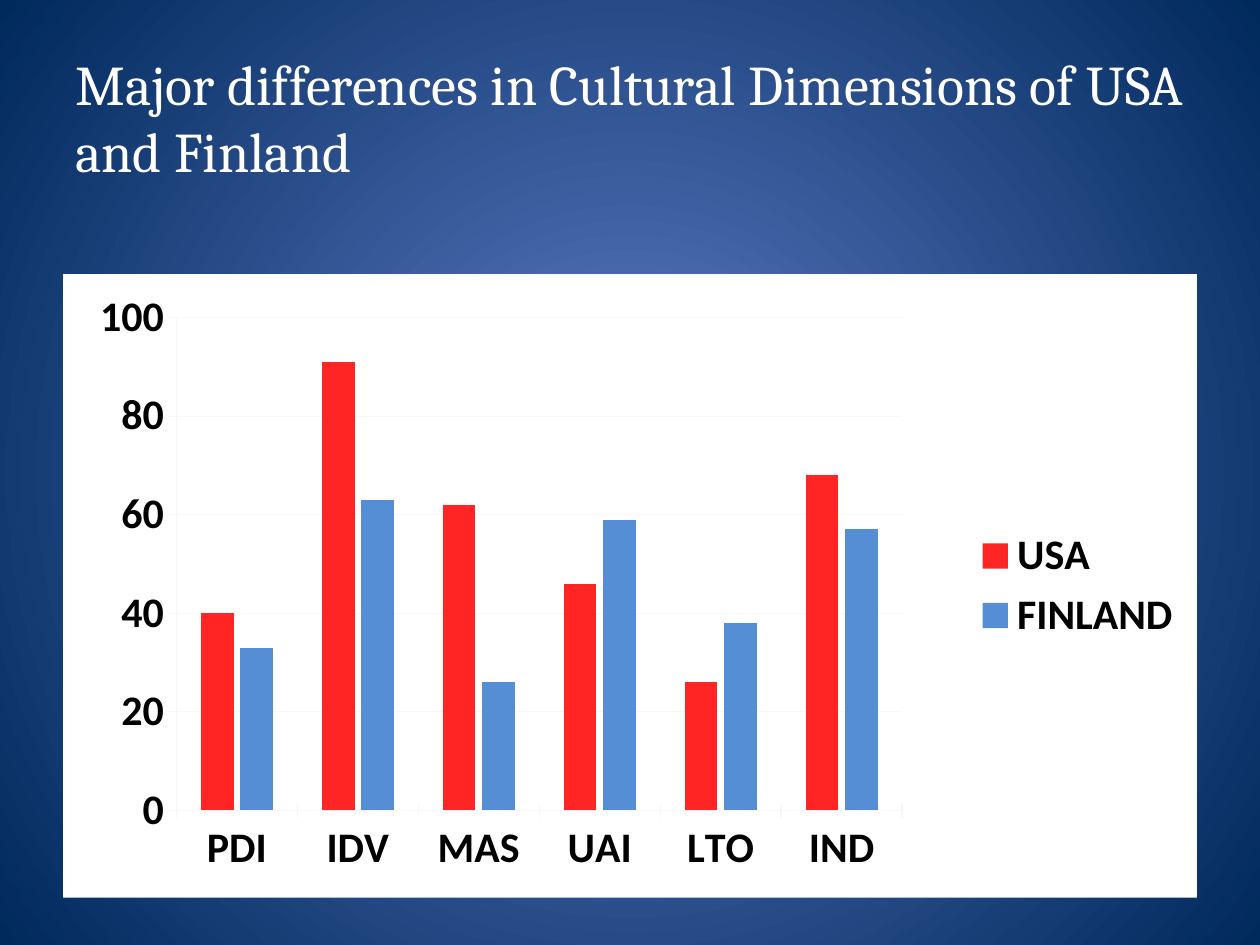
from lxml import etree
from pptx import Presentation
from pptx.chart.data import CategoryChartData
from pptx.dml.color import RGBColor
from pptx.enum.chart import XL_CHART_TYPE, XL_LEGEND_POSITION, XL_TICK_MARK
from pptx.enum.text import MSO_ANCHOR
from pptx.oxml import parse_xml
from pptx.oxml.ns import nsdecls, qn
from pptx.util import Inches, Pt

COLUMNS = XL_CHART_TYPE.COLUMN_CLUSTERED
LEGEND_RIGHT = XL_LEGEND_POSITION.RIGHT
TICK_CROSS = XL_TICK_MARK.CROSS
MIDDLE = MSO_ANCHOR.MIDDLE

# Slide size and the shared left margin, in inches
WIDTH, HEIGHT = 10, 7.5
MARGIN = 0.05 * WIDTH
CONTENT_WIDTH = WIDTH - 2 * MARGIN

BLACK, WHITE, PALE_GREY = "000000", "FFFFFF", "F7F7F7"
GLOW_CENTRE, GLOW_EDGE = "5E7CC5", "00295C"

DIMENSIONS = ["PDI", "IDV", "MAS", "UAI", "LTO", "IND"]
COUNTRIES = [
    ("USA", "FF2525", [40, 91, 62, 46, 26, 68]),
    ("FINLAND", "558ED5", [33, 63, 26, 59, 38, 57]),
]
PLOT_SHARES = {"x": 0.1, "y": 0.07, "w": 0.64, "h": 0.79}


def rgb(hex_color):
    return RGBColor.from_string(hex_color)


def set_radial_background(slide, centre, edge):
    fill = slide.background.fill
    fill.gradient()
    for stop, position, color in zip(fill.gradient_stops, (0, 1), (centre, edge)):
        stop.position = position
        stop.color.rgb = rgb(color)
    # Turn the linear gradient into a circular one
    grad = next(slide.element.iter(qn("a:gradFill")))
    grad.remove(grad.find(qn("a:lin")))
    path = etree.SubElement(grad, qn("a:path"), path="circle")
    etree.SubElement(path, qn("a:fillToRect"),
                     {side: "50000" for side in "ltrb"})


def add_title(slide, text, top, height):
    sp = slide.shapes.add_textbox(Inches(MARGIN), Inches(top),
                                  Inches(CONTENT_WIDTH), Inches(height))
    tf = sp.text_frame
    tf.word_wrap = True
    tf.vertical_anchor = MIDDLE
    p = tf.paragraphs[0]
    p.text = text
    p.font.name = "Cambria"
    p.font.size = Pt(32)
    p.font.color.rgb = rgb(WHITE)


def set_chart_area(chart, fill, shares):
    chart_el = chart.element.find(qn("c:chart"))
    chart_el.addnext(parse_xml(
        f'<c:spPr {nsdecls("c", "a")}><a:solidFill><a:srgbClr val="{fill}"/>'
        '</a:solidFill><a:ln><a:noFill/></a:ln></c:spPr>'))
    # Fix the inner plot area as shares of the chart
    plot_area = chart_el.find(qn("c:plotArea"))
    for layout in plot_area.findall(qn("c:layout")):
        plot_area.remove(layout)
    modes = '<c:xMode val="edge"/><c:yMode val="edge"/>'
    sizes = "".join(f'<c:{key} val="{share}"/>' for key, share in shares.items())
    plot_area.insert(0, parse_xml(
        f'<c:layout {nsdecls("c")}><c:manualLayout>'
        f'<c:layoutTarget val="inner"/>{modes}{sizes}</c:manualLayout></c:layout>'))


def style_axis(axis):
    axis.major_tick_mark = TICK_CROSS
    axis.format.line.color.rgb = rgb(PALE_GREY)


def add_column_chart(slide, top, height):
    data = CategoryChartData()
    data.categories = DIMENSIONS
    for name, _, values in COUNTRIES:
        data.add_series(name, values)
    chart = slide.shapes.add_chart(
        COLUMNS, Inches(MARGIN), Inches(top),
        Inches(CONTENT_WIDTH), Inches(height), data).chart

    chart.has_title = False
    chart.font.name = "Calibri"
    chart.font.size = Pt(24)
    chart.font.bold = True
    chart.font.color.rgb = rgb(BLACK)
    set_chart_area(chart, WHITE, PLOT_SHARES)

    # Columns
    plot = chart.plots[0]
    plot.vary_by_categories = False
    plot.gap_width = 150
    plot.overlap = -20
    for series, (_, color, _) in zip(plot.series, COUNTRIES):
        series.format.fill.solid()
        series.format.fill.fore_color.rgb = rgb(color)

    # Axes
    style_axis(chart.category_axis)
    value_axis = chart.value_axis
    style_axis(value_axis)
    value_axis.minimum_scale, value_axis.maximum_scale = 0, 100
    value_axis.major_unit = 20
    value_axis.major_gridlines.format.line.color.rgb = rgb(PALE_GREY)

    # Legend
    chart.has_legend = True
    chart.legend.position = LEGEND_RIGHT
    chart.legend.include_in_layout = False


def main():
    prs = Presentation()
    prs.slide_width, prs.slide_height = Inches(WIDTH), Inches(HEIGHT)
    slide = prs.slides.add_slide(prs.slide_layouts[6])
    set_radial_background(slide, GLOW_CENTRE, GLOW_EDGE)
    add_column_chart(slide, top=0.29 * HEIGHT, height=0.66 * HEIGHT)
    add_title(slide, "Major differences in Cultural Dimensions of USA and Finland",
              top=0.04 * HEIGHT, height=1.25)
    prs.save("out.pptx")


if __name__ == "__main__":
    main()
